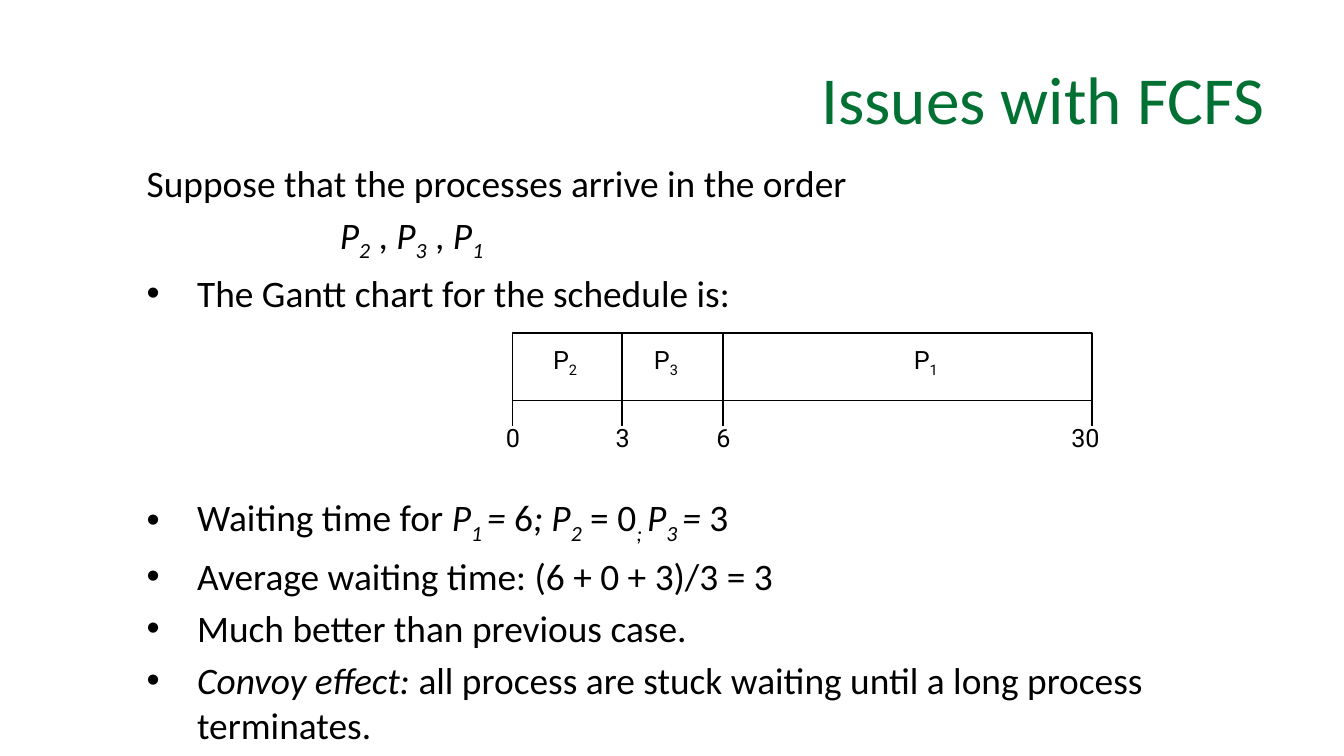
"""Build the slide on issues with first-come, first-served scheduling."""
from dataclasses import dataclass
from typing import NamedTuple

from lxml.etree import SubElement
from pptx import Presentation
from pptx.dml.color import RGBColor
from pptx.enum.shapes import MSO_CONNECTOR, MSO_SHAPE
from pptx.enum.text import MSO_ANCHOR, PP_ALIGN
from pptx.oxml.ns import qn
from pptx.util import Pt


@dataclass(frozen=True)
class Theme:
    title_color: RGBColor = RGBColor(0x00, 0x70, 0x33)
    ink: RGBColor = RGBColor(0, 0, 0)
    paper: RGBColor = RGBColor(255, 255, 255)
    text_font: str = "Calibri"
    chart_font: str = "Roboto"
    title_size: float = 36
    body_size: float = 20
    chart_size: float = 13.5
    line_width: float = 0.75


class Span(NamedTuple):
    text: str
    italic: bool = False
    subscript: bool = False


class Line(NamedTuple):
    spans: list[Span]
    bullet: bool = True
    space_before: float = 4
    margin: float = 27


class Box(NamedTuple):
    left: float
    top: float
    width: float
    height: float


class Job(NamedTuple):
    number: str
    center: float


class Tick(NamedTuple):
    time: str
    x: float
    label_center: float


THEME = Theme()
FRAME = Box(274.5, 178.5, 310.5, 36)
FRAME_BOTTOM = FRAME.top + FRAME.height
TICK_BOTTOM = 228
LABEL_HEIGHT = 24
JOB_TOP = 181.75
TIME_TOP = 222.5
LABEL_WIDTH = 29

JOBS = [Job("2", 302.75), Job("3", 356.75), Job("1", 496)]
TICKS = [
    Tick("0", 274.5, 274.75),
    Tick("3", 333.25, 333.5),
    Tick("6", 387.25, 387.5),
    Tick("30", 585, 581.5),
]


def process(number: str, lead: str = "") -> list[Span]:
    return [Span(lead + "P", italic=True), Span(number, italic=True, subscript=True)]


LINES = [
    Line([Span("Suppose that the processes arrive in the order")],
         bullet=False, space_before=0),
    Line([*process("2"), Span(" , "), *process("3"), Span(" , "), *process("1")],
         bullet=False, margin=103.5),
    Line([Span("The Gantt chart for the schedule is:")]),
    Line([Span("Waiting time for "), *process("1 "), Span("=", italic=True),
          Span(" 6"), *process("2", lead="; "), Span(" = 0"),
          Span("; ", italic=True, subscript=True), *process("3 "),
          Span("= ", italic=True), Span("3")], space_before=96),
    Line([Span("Average waiting time: (6 + 0 + 3)/3 = 3")]),
    Line([Span("Much better than previous case.")]),
    Line([Span("Convoy effect:", italic=True),
          Span(" all process are stuck waiting until a long process terminates.")]),
]


def add_spans(paragraph, spans: list[Span], font: str, size: float,
              color: RGBColor) -> None:
    for span in spans:
        run = paragraph.add_run()
        run.text = span.text
        run.font.name = font
        run.font.size = Pt(size)
        run.font.color.rgb = color
        run.font.italic = span.italic
        if span.subscript:
            run._r.get_or_add_rPr().set("baseline", "-25000")


def add_text_frame(slide, box: Box, anchor: MSO_ANCHOR, wrap: bool = True):
    shape = slide.shapes.add_textbox(*(Pt(length) for length in box))
    frame = shape.text_frame
    frame.word_wrap = wrap
    frame.vertical_anchor = anchor
    return frame


def add_title(slide, text: str) -> None:
    frame = add_text_frame(slide, Box(35.5, 22, 649, 60.5), MSO_ANCHOR.MIDDLE)
    paragraph = frame.paragraphs[0]
    paragraph.alignment = PP_ALIGN.RIGHT
    add_spans(paragraph, [Span(text)], THEME.text_font, THEME.title_size,
              THEME.title_color)


def add_body(slide, lines: list[Line]) -> None:
    frame = add_text_frame(slide, Box(71.5, 82, 577.5, 301), MSO_ANCHOR.TOP)
    for index, line in enumerate(lines):
        paragraph = frame.add_paragraph() if index else frame.paragraphs[0]
        paragraph.space_before = Pt(line.space_before)
        if line.bullet:
            properties = paragraph._p.get_or_add_pPr()
            properties.set("marL", str(Pt(line.margin)))
            properties.set("indent", str(-Pt(line.margin)))
            SubElement(properties, qn("a:buFont"), typeface="Arial")
            SubElement(properties, qn("a:buChar"), char="•")
        elif index:
            paragraph._p.get_or_add_pPr().set("marL", str(Pt(line.margin)))
        add_spans(paragraph, line.spans, THEME.text_font, THEME.body_size, THEME.ink)


def add_label(slide, center: float, top: float, spans: list[Span]) -> None:
    box = Box(center - LABEL_WIDTH / 2, top, LABEL_WIDTH, LABEL_HEIGHT)
    frame = add_text_frame(slide, box, MSO_ANCHOR.MIDDLE, wrap=False)
    frame.margin_left = frame.margin_right = Pt(0)
    paragraph = frame.paragraphs[0]
    paragraph.alignment = PP_ALIGN.CENTER
    add_spans(paragraph, spans, THEME.chart_font, THEME.chart_size, THEME.ink)


def add_vertical(slide, x: float, top: float, bottom: float) -> None:
    connector = slide.shapes.add_connector(
        MSO_CONNECTOR.STRAIGHT, Pt(x), Pt(top), Pt(x), Pt(bottom))
    connector.line.color.rgb = THEME.ink
    connector.line.width = Pt(THEME.line_width)
    SubElement(connector._element.spPr, qn("a:effectLst"))


def add_gantt(slide, jobs: list[Job], ticks: list[Tick]) -> None:
    shape = slide.shapes.add_shape(
        MSO_SHAPE.RECTANGLE, *(Pt(length) for length in FRAME))
    shape.shadow.inherit = False
    shape.fill.solid()
    shape.fill.fore_color.rgb = THEME.paper
    shape.line.color.rgb = THEME.ink
    shape.line.width = Pt(THEME.line_width)
    for job in jobs:
        add_label(slide, job.center, JOB_TOP,
                  [Span("P"), Span(job.number, subscript=True)])
    for tick in ticks[1:-1]:
        add_vertical(slide, tick.x, FRAME.top, FRAME_BOTTOM)
    for tick in ticks:
        add_vertical(slide, tick.x, FRAME_BOTTOM, TICK_BOTTOM)
        add_label(slide, tick.label_center, TIME_TOP, [Span(tick.time)])


def main() -> None:
    presentation = Presentation()
    presentation.slide_width = Pt(720)
    presentation.slide_height = Pt(405)
    slide = presentation.slides.add_slide(presentation.slide_layouts[6])
    add_title(slide, "Issues with FCFS")
    add_body(slide, LINES)
    add_gantt(slide, JOBS, TICKS)
    presentation.save("out.pptx")


if __name__ == "__main__":
    main()
